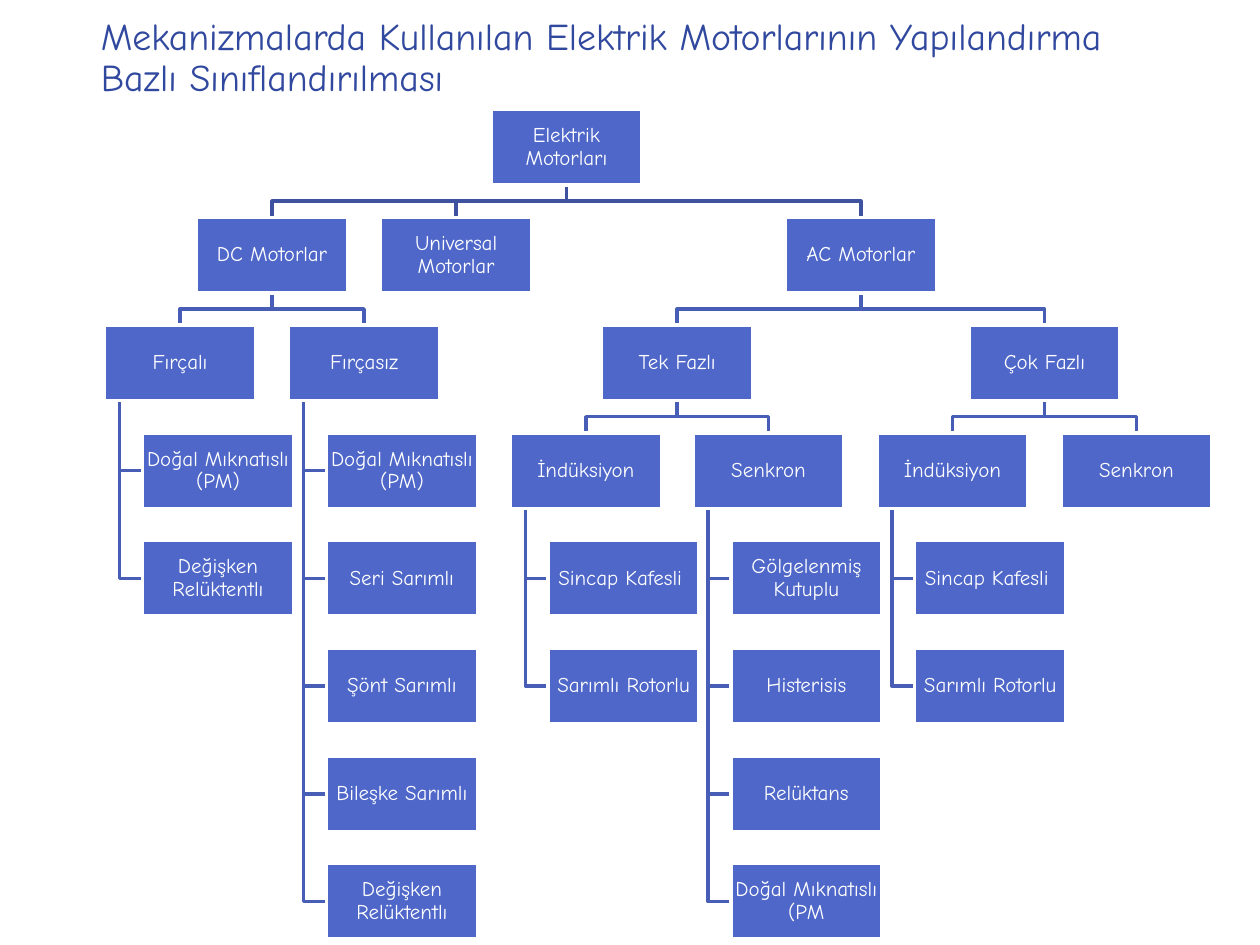
from pptx import Presentation
from pptx.dml.color import RGBColor
from pptx.enum.shapes import MSO_SHAPE
from pptx.enum.text import MSO_ANCHOR, PP_ALIGN
from pptx.util import Inches, Pt

RECTANGLE = MSO_SHAPE.RECTANGLE
MIDDLE = MSO_ANCHOR.MIDDLE
LEFT, CENTER = PP_ALIGN.LEFT, PP_ALIGN.CENTER

# Content: (label, children) or, where the column is fixed, (label, children, left)
TITLE = "Mekanizmalarda Kullanılan Elektrik Motorlarının Yapılandırma Bazlı Sınıflandırılması"
ROTORS = ["Sincap Kafesli ", "Sarımlı Rotorlu"]
MOTORS = ("Elektrik Motorları", [
    ("DC Motorlar", [
        ("Fırçalı", ["Doğal Mıknatıslı (PM)", "Değişken Relüktentlı"], 0.83),
        ("Fırçasız", ["Doğal Mıknatıslı (PM)", "Seri Sarımlı", "Şönt Sarımlı",
                      "Bileşke Sarımlı", "Değişken Relüktentlı"], 2.29),
    ]),
    ("Universal Motorlar", [], 3.02),
    ("AC Motorlar", [
        ("Tek Fazlı", [
            ("İndüksiyon", ROTORS, 4.05),
            ("Senkron", ["Gölgelenmiş Kutuplu", "Histerisis", "Relüktans",
                         "Doğal Mıknatıslı (PM"], 5.5),
        ]),
        ("Çok Fazlı", [
            ("İndüksiyon", ROTORS, 6.96),
            ("Senkron", [], 8.42),
        ]),
    ]),
])

# Format and layout rules
FONT = "Comic Neue"
BLUE, WHITE, NAVY = "4E67C8", "FFFFFF", "31489F"
TOP_LINE, LOWER_LINE = "3E52A0", "475DB6"
BOX_W, BOX_H = 1.2, 0.6
TOP, ROW_STEP = 0.87, 0.855
HANG_INDENT, TRUNK_INDENT = 0.3, 0.12


def color(hex_text):
    return RGBColor.from_string(hex_text)


def row_top(level):
    return TOP + level * ROW_STEP


def write(frame, text, size, hex_text, align):
    frame.word_wrap = True
    frame.vertical_anchor = MIDDLE
    para = frame.paragraphs[0]
    para.alignment = align
    para.line_spacing = 0.9
    span = para.add_run()
    span.text = text
    for name, value in {"name": FONT, "size": Pt(size)}.items():
        setattr(span.font, name, value)
    span.font.color.rgb = color(hex_text)


def arrange(node, level, boxes, elbows):
    """Collect boxes and elbow lines below a node; return the node's left."""
    label, children, *fixed = node
    line = LOWER_LINE if level else TOP_LINE
    bottom = row_top(level) + BOX_H
    if fixed:
        # Plain children hang in a column from a trunk on the left
        left = fixed[0]
        trunk, child_left = left + TRUNK_INDENT, left + HANG_INDENT
        for row, child in enumerate(children, level + 1):
            middle = row_top(row) + BOX_H / 2
            boxes.append((child, child_left, row_top(row)))
            elbows.append((line, [(trunk, bottom), (trunk, middle), (child_left, middle)]))
    else:
        # Branches spread in a row, with the parent centred above them
        lefts = [arrange(child, level + 1, boxes, elbows) for child in children]
        left = (lefts[0] + lefts[-1]) / 2
        center, next_top = left + BOX_W / 2, row_top(level + 1)
        bus = (bottom + next_top) / 2
        for child_left in lefts:
            child_center = child_left + BOX_W / 2
            elbows.append((line, [(center, bottom), (center, bus),
                                  (child_center, bus), (child_center, next_top)]))
    boxes.append((label, left, row_top(level)))
    return left


def draw_elbow(page, hex_text, points):
    start, *rest = [(Inches(x), Inches(y)) for x, y in points]
    builder = page.shapes.build_freeform(*start)
    builder.add_line_segments(rest, close=False)
    elbow = builder.convert_to_shape()
    elbow.shadow.inherit = False
    elbow.fill.background()
    elbow.line.color.rgb = color(hex_text)
    elbow.line.width = Pt(2)


def draw_box(page, label, left, top):
    box = page.shapes.add_shape(RECTANGLE, *map(Inches, (left, top, BOX_W, BOX_H)))
    box.shadow.inherit = False
    box.fill.solid()
    box.fill.fore_color.rgb = color(BLUE)
    box.line.color.rgb = color(WHITE)
    box.line.width = Pt(2)
    frame = box.text_frame
    for side in ("left", "top", "right", "bottom"):
        setattr(frame, f"margin_{side}", Inches(0.01))
    write(frame, label, 12, WHITE, CENTER)


def main():
    deck = Presentation()
    deck.slide_width, deck.slide_height = Inches(10), Inches(7.5)
    page = deck.slides.add_slide(deck.slide_layouts[5])

    # Title
    title = page.shapes.title
    title.left, title.top, title.width, title.height = map(Inches, (0.7, 0.08, 8.62, 0.78))
    write(title.text_frame, TITLE, 21.6, NAVY, LEFT)

    # Motor tree: lines behind, boxes in front
    boxes, elbows = [], []
    arrange(MOTORS, 0, boxes, elbows)
    for elbow in elbows:
        draw_elbow(page, *elbow)
    for box in boxes:
        draw_box(page, *box)

    deck.save("out.pptx")


if __name__ == "__main__":
    main()
